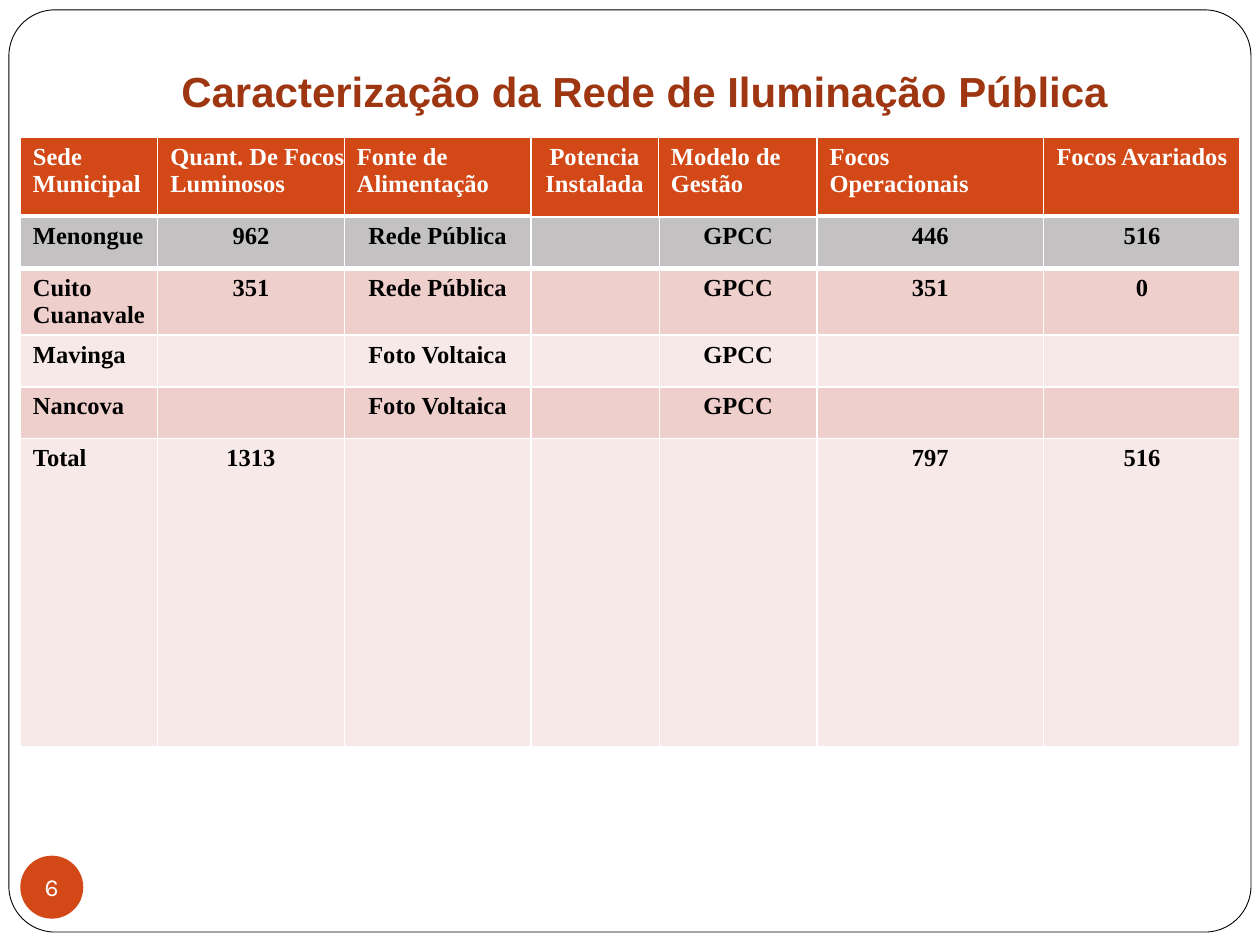
from lxml.etree import SubElement
from pptx import Presentation
from pptx.dml.color import RGBColor
from pptx.enum.shapes import MSO_SHAPE as Shape
from pptx.enum.text import MSO_ANCHOR as Anchor, MSO_AUTO_SIZE as AutoSize, PP_ALIGN as Align
from pptx.oxml.ns import qn
from pptx.util import Cm, Pt

TITLE = "Caracterização da Rede de Iluminação Pública"
PAGE_NUMBER = "6"
COLUMN_WIDTHS = [2.77, 3.76, 3.76, 2.59, 3.18, 4.57, 3.96]
HEADERS = [
    (0, 1.6, [("Sede Municipal", 3.58, Align.LEFT)]),
    (1, 1.6, [("Quant. De Focos Luminosos", 5.16, Align.LEFT)]),
    (2, 1.6, [("Fonte de\nAlimentação", 5.16, Align.LEFT)]),
    (3, 1.83, [("Potencia Instalada", 2.57, Align.CENTER),
               ("Modelo de Gestão", 3.2, Align.LEFT)]),
    (5, 1.6, [("Focos Operacionais", 4.57, Align.LEFT)]),
    (6, 1.6, [("Focos Avariados", 3.96, Align.CENTER)]),
]
ROWS = [
    ("Menongue", "962", "Rede Pública", "", "GPCC", "446", "516"),
    ("Cuito Cuanavale", "351", "Rede Pública", "", "GPCC", "351", "0"),
    ("Mavinga", "", "Foto Voltaica", "", "GPCC", "", ""),
    ("Nancova", "", "Foto Voltaica", "", "GPCC", "", ""),
    ("Total", "1313", "", "", "", "797", "516"),
]
ROW_HEIGHTS = [1.04, 1.04, 1.04, 1.04, 6.22]
TABLE_LEFT, HEADER_TOP, BODY_TOP = 0.41, 2.77, 4.37

THEME = {
    "white": "FFFFFF",
    "accent": "D34817",
    "line": "000000",
    "row_fills": ["C3C1C1", "EFCFCC", "F7E9E8", "EFCFCC", "F7E9E8"],
    "title": {"name": "Arial", "size": Pt(24), "bold": True, "color": "9E3611"},
    "header": {"name": "Times New Roman", "size": Pt(14), "bold": True, "color": "FFFFFF"},
    "body": {"name": "Times New Roman", "size": Pt(14), "bold": True, "color": "000000"},
    "number": {"name": "Karla", "size": Pt(14), "bold": False, "color": "FFFFFF"},
}


def write(frame, text, style, alignment):
    frame.text = text
    for paragraph in frame.paragraphs:
        paragraph.alignment = alignment
        for run in paragraph.runs:
            for name, value in style.items():
                if name == "color":
                    run.font.color.rgb = RGBColor.from_string(value)
                else:
                    setattr(run.font, name, value)


def fill_with(target, color):
    target.fill.solid()
    target.fill.fore_color.rgb = RGBColor.from_string(color)


def set_borders(cell, bottom):
    properties = cell._tc.get_or_add_tcPr()
    sides = {"lnL": 1, "lnR": 1, "lnT": 1, "lnB": bottom}
    for position, (side, width) in enumerate(sides.items()):
        line = SubElement(properties, qn(f"a:{side}"), w=str(Pt(width)))
        SubElement(SubElement(line, qn("a:solidFill")), qn("a:srgbClr"), val=THEME["white"])
        properties.insert(position, line)


def add_grid(slide, left, top, widths, heights):
    shape = slide.shapes.add_table(len(heights), len(widths), Cm(left), Cm(top),
                                   Cm(sum(widths)), Cm(sum(heights)))
    table = shape.table
    table.first_row = table.horz_banding = False
    for column, width in zip(table.columns, widths):
        column.width = Cm(width)
    for row, height in zip(table.rows, heights):
        row.height = Cm(height)
    return table


def format_cell(cell, text, style, alignment, fill, bottom):
    write(cell.text_frame, text, style, alignment)
    fill_with(cell, fill)
    set_borders(cell, bottom)


def add_headers(slide):
    for first_column, height, cells in HEADERS:
        left = TABLE_LEFT + sum(COLUMN_WIDTHS[:first_column])
        table = add_grid(slide, left, HEADER_TOP, [width for _, width, _ in cells], [height])
        for index, (text, _, alignment) in enumerate(cells):
            format_cell(table.cell(0, index), text, THEME["header"], alignment,
                        THEME["accent"], 3)


def add_body(slide):
    table = add_grid(slide, TABLE_LEFT, BODY_TOP, COLUMN_WIDTHS, ROW_HEIGHTS)
    for row, (values, fill) in enumerate(zip(ROWS, THEME["row_fills"])):
        for column, text in enumerate(values):
            format_cell(table.cell(row, column), text, THEME["body"],
                        Align.CENTER if column else Align.LEFT, fill, 1 if row else 3)


def add_frame(slide):
    frame = slide.shapes.add_shape(Shape.ROUNDED_RECTANGLE, Cm(0.18), Cm(0.2), Cm(25.04), Cm(18.59))
    frame.adjustments[0] = 0.05
    frame.shadow.inherit = False
    fill_with(frame, THEME["white"])
    frame.line.color.rgb = RGBColor.from_string(THEME["line"])
    frame.line.width = Pt(0.5)


def place_title(slide):
    title = slide.shapes.title
    places = {"left": Cm(2.49), "top": Cm(1.19), "width": Cm(21.01), "height": Cm(1.27)}
    for name, value in places.items():
        setattr(title, name, value)
    write(title.text_frame, TITLE, THEME["title"], Align.CENTER)
    settings = {"word_wrap": True, "vertical_anchor": Anchor.TOP,
                "auto_size": AutoSize.SHAPE_TO_FIT_TEXT}
    for name, value in settings.items():
        setattr(title.text_frame, name, value)
    slide.shapes.element.append(title.element)


def add_page_number(slide):
    badge = slide.shapes.add_shape(Shape.OVAL, Cm(TABLE_LEFT), Cm(17.25), Cm(1.27), Cm(1.27))
    badge.shadow.inherit = False
    fill_with(badge, THEME["accent"])
    badge.line.fill.background()
    write(badge.text_frame, PAGE_NUMBER, THEME["number"], Align.CENTER)
    settings = {"margin_left": 0, "margin_right": 0, "margin_top": 0, "margin_bottom": 0,
                "word_wrap": False, "vertical_anchor": Anchor.MIDDLE}
    for name, value in settings.items():
        setattr(badge.text_frame, name, value)


def main():
    presentation = Presentation()
    presentation.slide_width, presentation.slide_height = Cm(25.4), Cm(19.05)
    slide = presentation.slides.add_slide(presentation.slide_layouts[5])
    add_frame(slide)
    add_headers(slide)
    add_body(slide)
    place_title(slide)
    add_page_number(slide)
    presentation.save("out.pptx")


if __name__ == "__main__":
    main()
